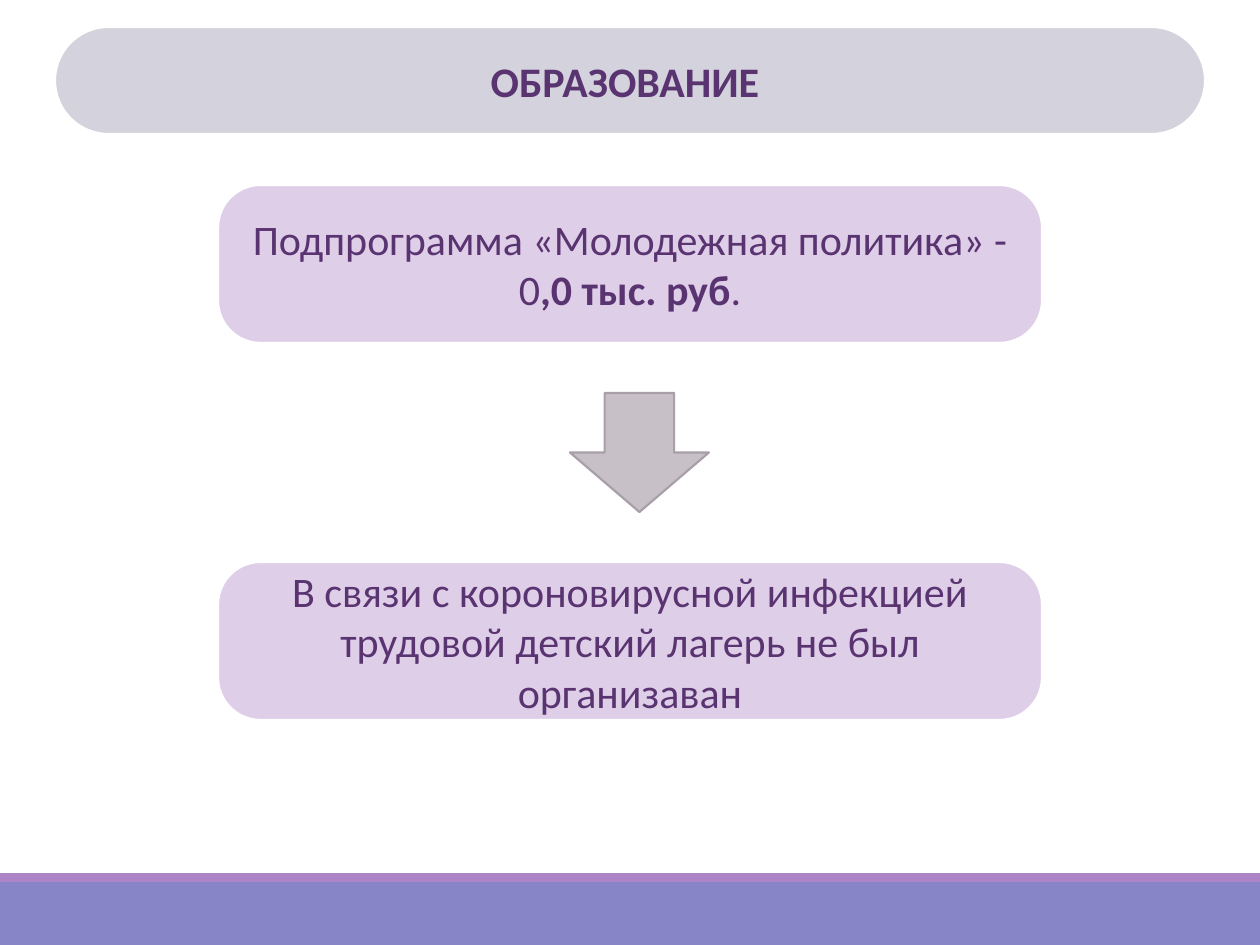
import pptx
import pptx.dml.color
import pptx.enum.shapes
import pptx.enum.text
import pptx.util

KIND = pptx.enum.shapes.MSO_SHAPE
EMU_PER_PX = 914400 / 126


def px(length):
    return pptx.util.Emu(round(length * EMU_PER_PX))


def colour(value):
    return pptx.dml.color.RGBColor.from_string(value)


class SlideBuilder:
    font = "Calibri"
    size = 24
    ink = "5A3471"
    card_fill = "DECEE8"
    outline = "FFFFFF"
    line_width = 1.25

    def __init__(self, page):
        self.page = page

    def shape(self, kind, place, fill, line=None, rounding=None):
        box = self.page.shapes.add_shape(kind, *map(px, place))
        box.shadow.inherit = False
        box.fill.solid()
        box.fill.fore_color.rgb = colour(fill)
        if line:
            box.line.color.rgb = colour(line)
            box.line.width = pptx.util.Pt(self.line_width)
        else:
            box.line.fill.background()
        if rounding is not None:
            box.adjustments[0] = rounding
        return box

    def label(self, box, spans):
        frame = box.text_frame
        frame.word_wrap = True
        frame.vertical_anchor = pptx.enum.text.MSO_ANCHOR.MIDDLE
        para = frame.paragraphs[0]
        para.alignment = pptx.enum.text.PP_ALIGN.CENTER
        for text, bold in spans:
            span = para.add_run()
            span.text = text
            span.font.name = self.font
            span.font.size = pptx.util.Pt(self.size)
            span.font.bold = bold
            span.font.color.rgb = colour(self.ink)

    def bar(self, top, height, fill):
        self.shape(KIND.RECTANGLE, (0, top, 1260, height), fill)

    def heading(self, text):
        self.shape(KIND.ROUNDED_RECTANGLE, (55, 27, 1150, 107),
                   "D4D3DD", self.outline, 0.5)
        title = self.page.shapes.title
        title.left, title.top, title.width, title.height = map(px, (50, 27, 1150, 107))
        self.label(title, [(text, True)])
        tree = title.element.getparent()
        tree.append(title.element)

    def card(self, top, spans):
        box = self.shape(KIND.ROUNDED_RECTANGLE, (218, top, 824, 158),
                         self.card_fill, self.outline, 0.27)
        self.label(box, spans)

    def down_arrow(self, place):
        self.shape(KIND.DOWN_ARROW, place, "C7C1C7", "A89FA8")


def main():
    deck = pptx.Presentation()
    deck.slide_width, deck.slide_height = px(1260), px(945)
    builder = SlideBuilder(deck.slides.add_slide(deck.slide_layouts[5]))

    builder.bar(882, 63, "8784C7")
    builder.bar(873, 9, "AD84C6")
    builder.heading("ОБРАЗОВАНИЕ")
    builder.card(185, [
        ("Подпрограмма «Молодежная политика» - 0", False),
        (",0 тыс. руб", True),
        (".", False),
    ])
    builder.down_arrow((570, 393, 139, 119))
    builder.card(562, [
        ("В связи с короновирусной инфекцией трудовой детский лагерь "
         "не был организаван", False),
    ])
    deck.save("out.pptx")


if __name__ == "__main__":
    main()
